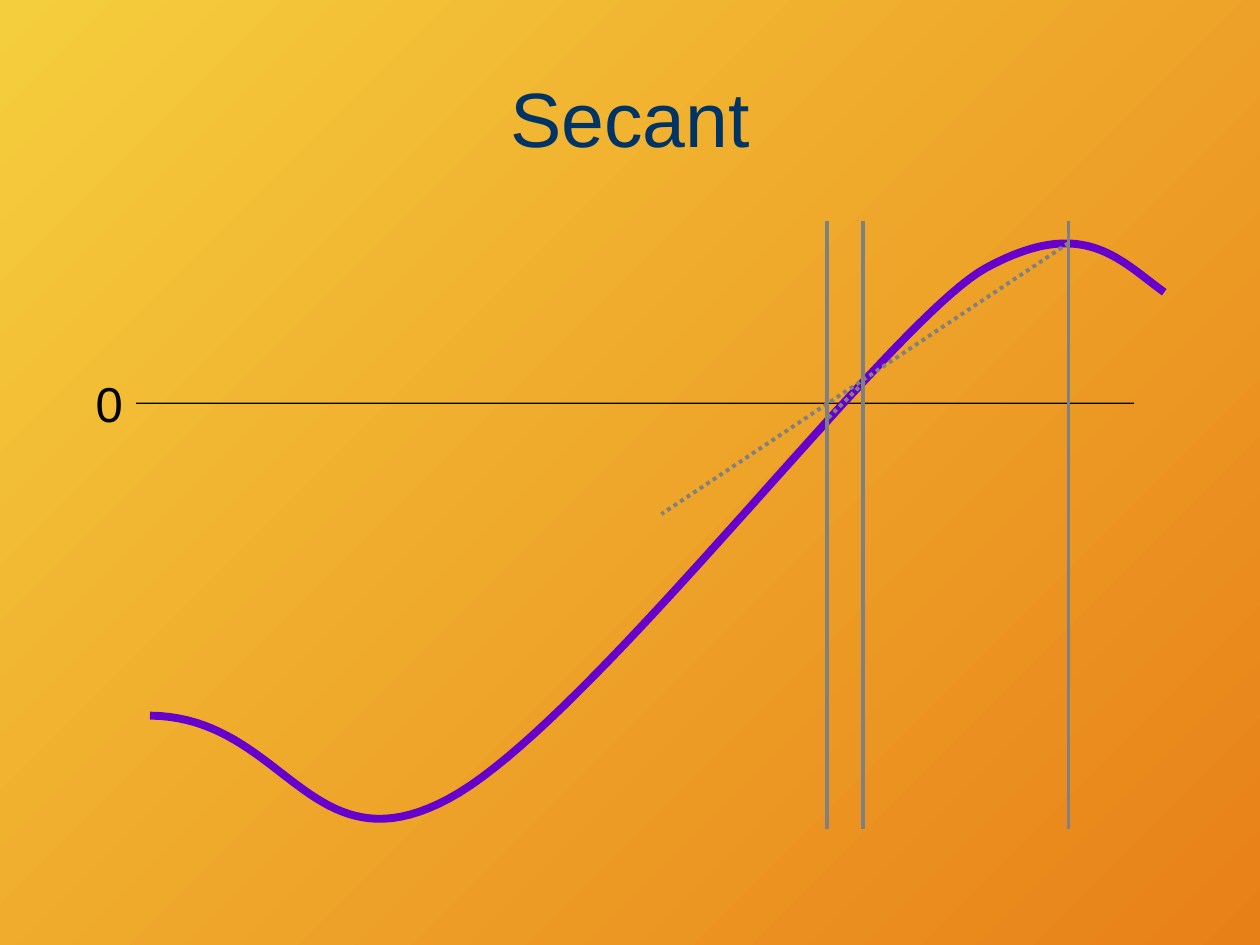
from dataclasses import dataclass
from typing import Optional

from lxml.etree import SubElement
from pptx import Presentation
from pptx.dml.color import RGBColor
from pptx.enum.dml import MSO_LINE_DASH_STYLE as Dash
from pptx.enum.shapes import MSO_CONNECTOR as Connector
from pptx.enum.text import MSO_ANCHOR as Anchor, PP_ALIGN as Align
from pptx.oxml.ns import qn
from pptx.util import Inches, Pt

COLUMNS, ROWS = 100, 75
Point = tuple[float, float]


@dataclass(frozen=True)
class Theme:
    font: str = "Arial"
    title: str = "003366"
    ink: str = "000000"
    curve: str = "6600CC"
    guide: str = "808080"
    background: tuple[str, str] = ("F5CE3D", "E88018")
    title_size: float = 44
    label_size: float = 28
    axis_width: float = 0.75
    guide_width: float = 2.25
    curve_width: float = 4.5


@dataclass(frozen=True)
class Segment:
    start: Point
    end: Point
    color: str
    width: float
    dash: Optional[Dash] = None


@dataclass(frozen=True)
class Label:
    text: str
    left: float
    top: float
    width: float
    height: float
    size: float
    color: str
    align: Align = Align.LEFT
    anchor: Anchor = Anchor.TOP
    wrap: bool = False


THEME = Theme()
TITLE = Label("Secant", 5, 3, 90, 12.5, THEME.title_size, THEME.title,
              Align.CENTER, Anchor.MIDDLE, True)
ZERO = Label("0", 6.6, 29.15, 4.2, 5.7, THEME.label_size, THEME.ink)
AXIS = Segment((10.8, 32), (90, 32), THEME.ink, THEME.axis_width)
CURVE_START = (11.9, 56.8)
CURVE_BEZIERS = (
    ((22.6, 56.9), (24.6, 69.3), (35.6, 63.4)),
    ((46.7, 57.5), (70.6, 25.5), (78.2, 21.3)),
    ((85.9, 17.1), (88.7, 20.5), (92.4, 23.2)),
)
STEPS = 40


def guide(column: float) -> Segment:
    return Segment((column, 17.5), (column, 65.8), THEME.guide, THEME.guide_width)


def secant(start: Point, end: Point) -> Segment:
    return Segment(start, end, THEME.guide, THEME.guide_width, Dash.ROUND_DOT)


GUIDES = (
    guide(84.8),
    secant((84.8, 19.3), (52.5, 40.8)),
    guide(68.5),
    guide(65.6),
    secant((68.6, 30.3), (65.6, 33.3)),
)


def cells(*lengths: float) -> list[int]:
    return [Inches(length * 10 / COLUMNS) for length in lengths]


def style_line(line, color: str, width: float, dash: Optional[Dash] = None) -> None:
    line.color.rgb = RGBColor.from_string(color)
    line.width = Pt(width)
    if dash is not None:
        line.dash_style = dash


def draw_label(shapes, label: Label):
    box = shapes.add_textbox(*cells(label.left, label.top, label.width, label.height))
    frame = box.text_frame
    frame.word_wrap = label.wrap
    frame.vertical_anchor = label.anchor
    paragraph = frame.paragraphs[0]
    paragraph.text = label.text
    paragraph.alignment = label.align
    paragraph.font.name = THEME.font
    paragraph.font.size = Pt(label.size)
    paragraph.font.color.rgb = RGBColor.from_string(label.color)
    return box


def draw_segment(shapes, segment: Segment):
    connector = shapes.add_connector(
        Connector.STRAIGHT, *cells(*segment.start, *segment.end))
    style_line(connector.line, segment.color, segment.width, segment.dash)
    SubElement(connector.element.spPr, qn("a:effectLst"))
    return connector


def bezier_point(points: tuple[Point, ...], t: float) -> Point:
    weights = ((1 - t) ** 3, 3 * t * (1 - t) ** 2, 3 * t ** 2 * (1 - t), t ** 3)
    x, y = (sum(w * value for w, value in zip(weights, axis)) for axis in zip(*points))
    return x, y


def draw_curve(shapes) -> None:
    builder = shapes.build_freeform(*cells(*CURVE_START))
    start = CURVE_START
    for controls in CURVE_BEZIERS:
        points = (start, *controls)
        builder.add_line_segments(
            [cells(*bezier_point(points, step / STEPS)) for step in range(1, STEPS + 1)],
            close=False)
        start = controls[-1]
    shape = builder.convert_to_shape()
    shape.shadow.inherit = False
    shape.fill.background()
    style_line(shape.line, THEME.curve, THEME.curve_width)


def paint_background(slide) -> None:
    fill = slide.background.fill
    fill.gradient()
    fill.gradient_angle = 315
    for stop, color in zip(fill.gradient_stops, THEME.background):
        stop.color.rgb = RGBColor.from_string(color)


def main() -> None:
    presentation = Presentation()
    presentation.slide_width, presentation.slide_height = cells(COLUMNS, ROWS)
    slide = presentation.slides.add_slide(presentation.slide_layouts[6])
    paint_background(slide)
    draw_label(slide.shapes, TITLE)

    plot = slide.shapes.add_group_shape().shapes
    axis = draw_segment(plot, AXIS)
    axis.begin_connect(draw_label(plot, ZERO), 3)
    draw_curve(plot)

    for segment in GUIDES:
        draw_segment(slide.shapes, segment)
    presentation.save("out.pptx")


if __name__ == "__main__":
    main()
